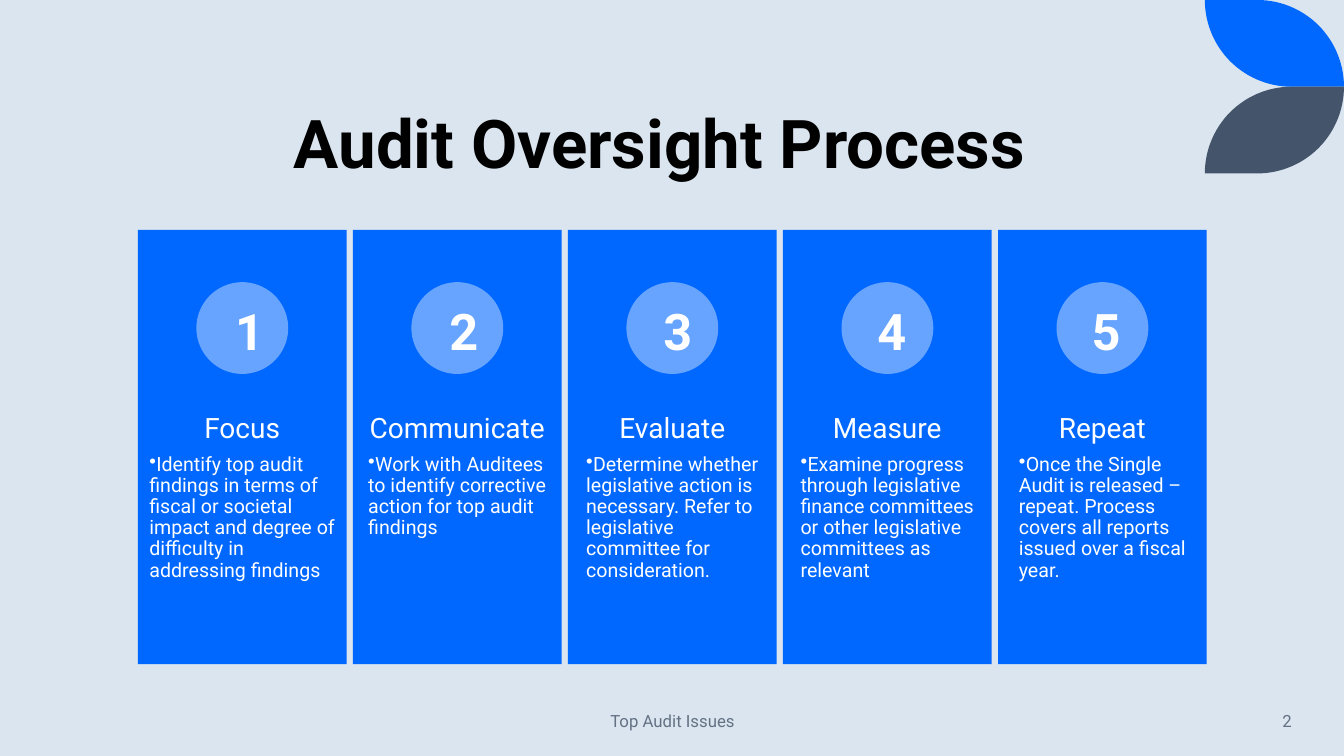
from math import cos, radians, sin

from lxml.etree import SubElement
from pptx import Presentation
from pptx.dml.color import RGBColor
from pptx.enum.shapes import MSO_SHAPE as Preset
from pptx.enum.text import MSO_ANCHOR as Anchor, PP_ALIGN as Align
from pptx.oxml.ns import qn
from pptx.util import Inches, Pt

BLUE, PALE_BLUE, SLATE = "0068FF", "66A4FF", "44546A"
WHITE, BLACK, GREY, BACKGROUND = "FFFFFF", "000000", "637183", "DAE5EF"

STEPS = [
    ("Focus", "Identify top audit findings in terms of fiscal or societal impact "
              "and degree of difficulty in addressing findings"),
    ("Communicate", "Work with Auditees to identify corrective action for top audit findings"),
    ("Evaluate", "Determine whether legislative action is necessary. "
                 "Refer to legislative committee for consideration."),
    ("Measure", "Examine progress through legislative finance committees "
                "or other legislative committees as relevant"),
    ("Repeat", "Once the Single Audit is released – repeat. "
               "Process covers all reports issued over a fiscal year."),
]


def color(value):
    return RGBColor.from_string(value)


def write(paragraph, text, size=14, fill=WHITE, bold=False, align=Align.LEFT,
          line=1.0, after=0, font="Roboto"):
    paragraph.alignment = align
    paragraph.line_spacing = line
    paragraph.space_before = Pt(0)
    paragraph.space_after = Pt(after)
    run = paragraph.add_run()
    run.text = text
    run.font.name, run.font.size, run.font.bold = font, Pt(size), bold
    run.font.color.rgb = color(fill)


def add_bullet(paragraph):
    properties = paragraph._p.get_or_add_pPr()
    properties.set("marL", "0")
    properties.set("indent", str(-Inches(0.12)))
    SubElement(properties, qn("a:buChar")).set("char", "•")


class SlideBuilder:
    """Draws on one slide; every length is a percentage of the slide's size."""

    def __init__(self, presentation):
        self.width = presentation.slide_width
        self.height = presentation.slide_height
        self.slide = presentation.slides.add_slide(presentation.slide_layouts[5])
        self.slide.background.fill.solid()
        self.slide.background.fill.fore_color.rgb = color(BACKGROUND)

    def across(self, share):
        return round(self.width * share / 100)

    def down(self, share):
        return round(self.height * share / 100)

    def area(self, left, top, width, height):
        return self.across(left), self.down(top), self.across(width), self.down(height)

    def paint(self, shape, fill):
        shape.shadow.inherit = False
        shape.fill.solid()
        shape.fill.fore_color.rgb = color(fill)
        shape.line.fill.background()

    def title(self, text, *place):
        shape = self.slide.shapes.title
        shape.left, shape.top, shape.width, shape.height = self.area(*place)
        frame = shape.text_frame
        frame.word_wrap = True
        frame.vertical_anchor = Anchor.BOTTOM
        write(frame.paragraphs[0], text, size=48, fill=BLACK, bold=True,
              align=Align.CENTER, line=0.9)

    def preset(self, kind, fill, *place):
        self.paint(self.slide.shapes.add_shape(kind, *self.area(*place)), fill)

    def frame(self, *place, anchor=Anchor.TOP):
        frame = self.slide.shapes.add_textbox(*self.area(*place)).text_frame
        frame.word_wrap = True
        frame.vertical_anchor = anchor
        return frame

    def text(self, text, *place, anchor=Anchor.TOP, **style):
        write(self.frame(*place, anchor=anchor).paragraphs[0], text, **style)

    def step_text(self, heading, detail, *place):
        """Centres the text block across its column while the detail stays left-aligned."""
        frame = self.frame(*place)
        frame.margin_left = frame.margin_right = Inches(0.11)
        frame.margin_top = frame.margin_bottom = Inches(0.11)
        frame._txBody.bodyPr.set("anchorCtr", "1")
        write(frame.paragraphs[0], heading, size=20, align=Align.CENTER, line=0.9, after=7)
        paragraph = frame.add_paragraph()
        write(paragraph, detail, line=0.9, after=2)
        add_bullet(paragraph)

    def leaf(self, fill, left, edge, direction):
        """Draws a leaf from its flat edge, downwards (1) or upwards (-1)."""
        flat, radius_x, radius_y = 3.9, 6.45, 11.47
        angles = [radians(step * 3) for step in range(31)]
        outer = [(flat + radius_x * sin(a), radius_y * (1 - cos(a))) for a in angles]
        inner = [(radius_x * (1 - sin(a)), radius_y * cos(a)) for a in angles]
        points = [(self.across(left + x), self.down(edge + direction * y))
                  for x, y in outer + inner]
        builder = self.slide.shapes.build_freeform(*points[0])
        builder.add_line_segments(points[1:], close=True)
        self.paint(builder.convert_to_shape(), fill)


def main():
    presentation = Presentation()
    presentation.slide_width, presentation.slide_height = Inches(13.33), Inches(7.5)
    builder = SlideBuilder(presentation)
    builder.leaf(BLUE, 89.65, 0, 1)
    builder.leaf(SLATE, 89.65, 22.94, -1)
    builder.title("Audit Oversight Process ", 9.6, 5.6, 80.2, 19.33)

    for index, (heading, detail) in enumerate(STEPS):
        left = 10.26 + 16 * index
        builder.preset(Preset.RECTANGLE, BLUE, left, 30.4, 15.53, 57.47)
        builder.step_text(heading, detail, left, 53.33, 15.53, 22.93)
        builder.preset(Preset.OVAL, PALE_BLUE, left + 4.35, 37.33, 6.83, 12.13)
        builder.text(str(index + 1), 16.76 + 15.93 * index, 39.07, 2.85, 9.47,
                     size=36, bold=True, align=Align.CENTER)

    footer = {"anchor": Anchor.MIDDLE, "size": 12, "fill": GREY}
    builder.text("Top Audit Issues", 33.16, 92.67, 33.76, 5.33, align=Align.CENTER, **footer)
    builder.text("2", 83.27, 92.67, 13.58, 5.33, align=Align.RIGHT, **footer)
    presentation.save("out.pptx")


if __name__ == "__main__":
    main()
